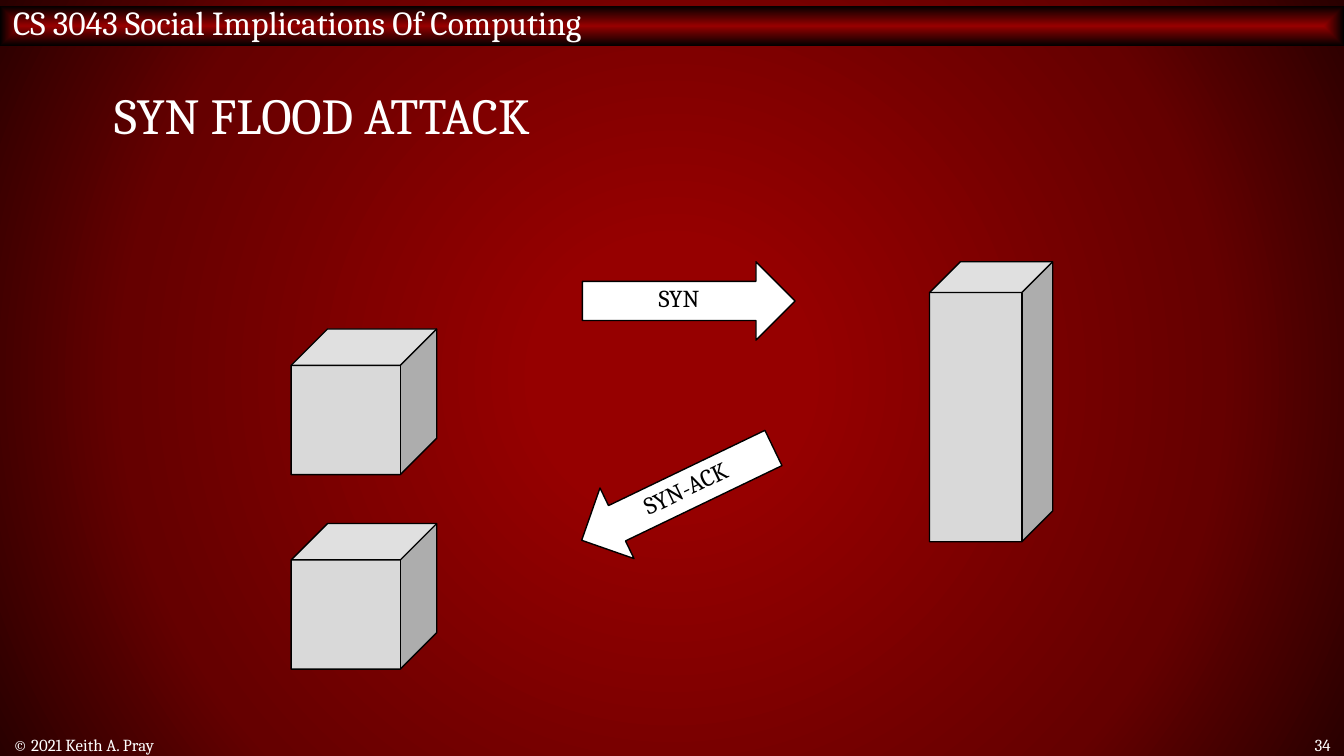
from pptx import Presentation, util as u
from pptx.dml.color import RGBColor
from pptx.enum import shapes, text
from pptx.oxml import parse_xml
from pptx.oxml.ns import nsdecls, qn

PX = 9525  # 96 px to the inch
SHAPE = shapes.MSO_SHAPE
ALIGN = text.PP_ALIGN


def glow(props, kind, stops):
    """Swap the solid fill in props for a gradient spreading from the centre."""
    marks = "".join(
        f'<a:gs pos="{pos * 1000}"><a:srgbClr val="{color}"/></a:gs>'
        for pos, color in stops)
    grad = parse_xml(
        f'<a:gradFill {nsdecls("a")} rotWithShape="1"><a:gsLst>{marks}</a:gsLst>'
        f'<a:path path="{kind}"><a:fillToRect l="50000" t="50000" r="50000" '
        f'b="50000"/></a:path></a:gradFill>')
    props.replace(props.find(qn("a:solidFill")), grad)


def write(shape, words, size, color="FFFFFF", align=ALIGN.LEFT, space=None, **frame):
    """Put one formatted line in shape; frame holds text frame settings."""
    box = shape.text_frame
    look = dict(word_wrap=True, auto_size=text.MSO_AUTO_SIZE.NONE,
                vertical_anchor=text.MSO_ANCHOR.MIDDLE)
    for key, val in {**look, **frame}.items():
        setattr(box, key, val)
    para = box.paragraphs[0]
    para.alignment, para.line_spacing = align, space
    run = para.add_run()
    run.text = words
    run.font.name, run.font.size = "Cambria", u.Pt(size)
    run.font.color.rgb = RGBColor.from_string(color)


deck = Presentation()
deck.slide_width, deck.slide_height = 960 * PX, 540 * PX
slide = deck.slides.add_slide(deck.slide_layouts[5])
slide.background.fill.solid()
glow(slide.element.xpath(".//p:bgPr")[0], "circle",
     [(17, "960000"), (71, "650000"), (100, "290000")])

# Course bar
bar = slide.shapes.add_shape(SHAPE.RECTANGLE, 0, 4 * PX, 960 * PX, 29 * PX)
bar.shadow.inherit = False
bar.line.fill.background()
bar.fill.solid()
glow(bar.element.spPr, "shape", [(0, "960000"), (100, "000000")])
write(bar, "CS 3043 Social Implications Of Computing", 18,
      margin_top=0, margin_bottom=5 * PX)

# Title
title = slide.shapes.title
title.left, title.top, title.width, title.height = (
    n * PX for n in (72, 38, 816, 96))
write(title, "SYN FLOOD ATTACK", 27, space=0.8)

# Hosts, server and the packets between them
for kind, left, top, wide, high, turn, fill, label in [
    (SHAPE.CUBE, 208, 235, 104, 104, 0, "D9D9D9", ""),
    (SHAPE.CUBE, 664, 187, 88, 200, 0, "D9D9D9", ""),
    (SHAPE.RIGHT_ARROW, 416, 187, 152, 56, 0, "FFFFFF", "SYN"),
    (SHAPE.LEFT_ARROW, 408, 325, 152, 56, 334.3, "FFFFFF", "SYN-ACK"),
    (SHAPE.CUBE, 208, 374, 104, 104, 0, "D9D9D9", ""),
]:
    part = slide.shapes.add_shape(kind, left * PX, top * PX, wide * PX, high * PX)
    part.shadow.inherit = False
    part.rotation = turn
    part.fill.solid()
    part.fill.fore_color.rgb = RGBColor.from_string(fill)
    part.line.color.rgb = RGBColor.from_string("000000")
    part.line.width = u.Pt(0.75)
    if label:
        write(part, label, 13, "000000", ALIGN.CENTER, 0.8, word_wrap=False)

# Footer
for left, wide, words, align in [
    (0, 584, "© 2021 Keith A. Pray", ALIGN.LEFT),
    (895, 65, "34", ALIGN.RIGHT),
]:
    foot = slide.shapes.add_textbox(left * PX, 524 * PX, wide * PX, 16 * PX)
    write(foot, words, 9, align=align)

deck.save("out.pptx")
